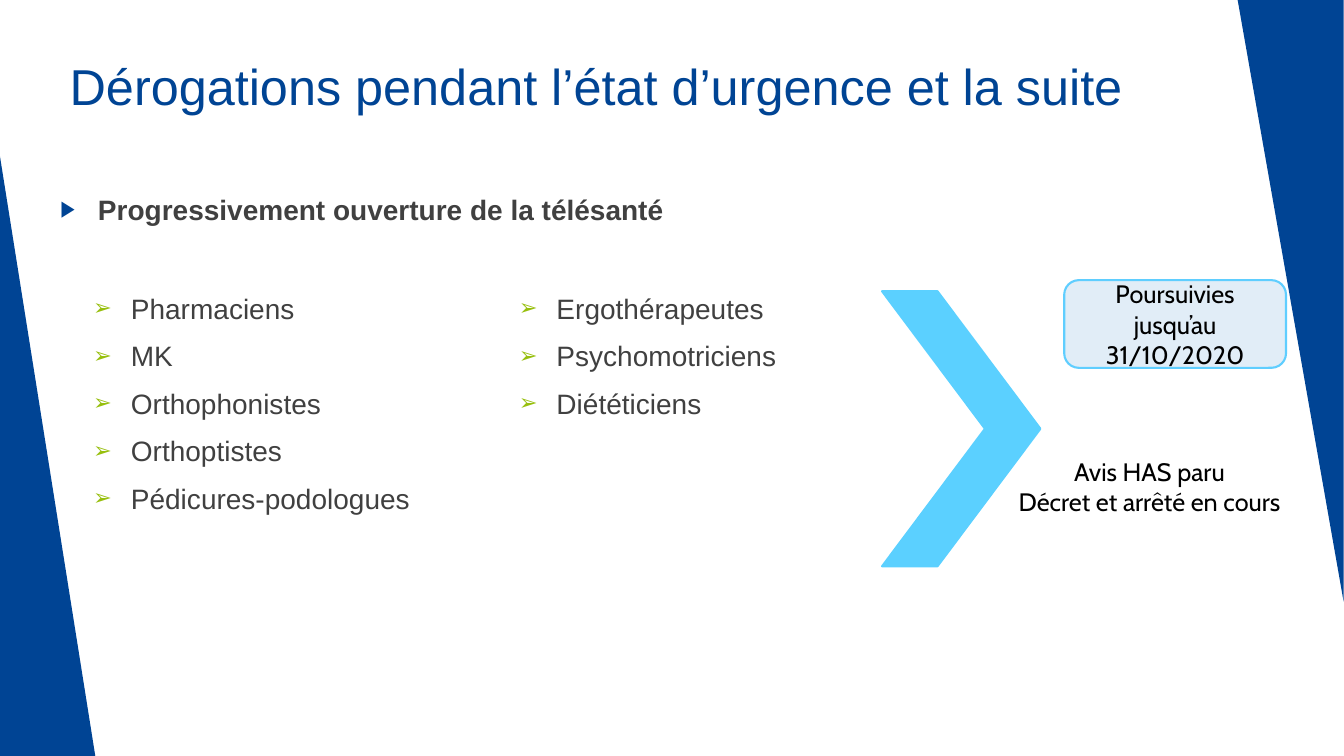
from dataclasses import dataclass
from typing import Any

from lxml import etree
from pptx import Presentation
from pptx.dml.color import RGBColor
from pptx.enum import shapes, text
from pptx.oxml import ns
from pptx.util import Cm, Pt

NAVY = RGBColor(0x00, 0x44, 0x94)
SKY = RGBColor(0x5B, 0xD0, 0xFF)
SKY_EDGE = RGBColor(0x5F, 0xCE, 0xFF)
PALE = RGBColor(0xE1, 0xED, 0xF7)
GREEN = RGBColor(0x97, 0xBF, 0x0D)
GREY = RGBColor(0x40, 0x40, 0x40)
BLACK = RGBColor(0x00, 0x00, 0x00)

INDENT = Cm(0.95)
PROFESSIONS = [
    "Pharmaciens", "MK", "Orthophonistes", "Orthoptistes",
    "Pédicures-podologues", "Ergothérapeutes", "Psychomotriciens",
    "Diététiciens",
]
TITLE_FONT = {"name": "Arial", "size": Pt(36), "color": NAVY}
HEADING_FONT = {"name": "Arial", "size": Pt(20), "bold": True, "color": GREY}
LIST_FONT = {"name": "Arial", "size": Pt(20), "color": GREY}
NOTE_FONT = {"name": "Cabin", "size": Pt(18), "color": BLACK}


@dataclass(frozen=True)
class Box:
    left: float
    top: float
    width: float
    height: float

    def lengths(self) -> tuple[Cm, Cm, Cm, Cm]:
        return Cm(self.left), Cm(self.top), Cm(self.width), Cm(self.height)


@dataclass(frozen=True)
class Figure:
    kind: shapes.MSO_SHAPE
    box: Box
    fill: RGBColor
    line: RGBColor | None = None
    rotation: int = 0
    adjustment: float | None = None


@dataclass(frozen=True)
class Bullet:
    char: str
    color: RGBColor
    margin: Cm


LEFT_WEDGE = Figure(shapes.MSO_SHAPE.RIGHT_TRIANGLE,
                    Box(0, 3.94, 2.41, 15.16), NAVY)
RIGHT_WEDGE = Figure(shapes.MSO_SHAPE.RIGHT_TRIANGLE,
                     Box(31.19, 0, 2.67, 15.16), NAVY, rotation=180)
CHEVRON = Figure(shapes.MSO_SHAPE.CHEVRON,
                 Box(22.23, 7.34, 3.99, 6.93), SKY, SKY, adjustment=0.65)
DEADLINE = Figure(shapes.MSO_SHAPE.ROUNDED_RECTANGLE,
                  Box(26.82, 7.06, 5.59, 2.21), PALE, SKY_EDGE)


def add_figure(s: Any, figure: Figure) -> Any:
    sp = s.shapes.add_shape(figure.kind, *figure.box.lengths())
    sp.shadow.inherit = False
    sp.rotation = figure.rotation
    sp.fill.solid()
    sp.fill.fore_color.rgb = figure.fill
    if figure.line is None:
        sp.line.fill.background()
    else:
        sp.line.color.rgb = figure.line
        sp.line.width = Pt(1.5)
    if figure.adjustment is not None:
        sp.adjustments[0] = figure.adjustment
    return sp


def add_text_box(s: Any, box: Box) -> Any:
    tf = s.shapes.add_textbox(*box.lengths()).text_frame
    tf.word_wrap = True
    return tf


def add_bullet(p: Any, bullet: Bullet) -> None:
    pPr = p._p.get_or_add_pPr()
    pPr.set("marL", str(bullet.margin))
    pPr.set("indent", str(-INDENT))
    color = etree.SubElement(pPr, ns.qn("a:buClr"))
    etree.SubElement(color, ns.qn("a:srgbClr"), val=str(bullet.color))
    etree.SubElement(pPr, ns.qn("a:buSzPct"), val="80000")
    etree.SubElement(pPr, ns.qn("a:buFont"), typeface="Arial")
    etree.SubElement(pPr, ns.qn("a:buChar"), char=bullet.char)


def write(tf: Any, lines: list[str], font: dict[str, Any],
          align: text.PP_ALIGN = text.PP_ALIGN.LEFT,
          bullet: Bullet | None = None, gap: int = 0) -> None:
    for i, line in enumerate(lines):
        p = tf.add_paragraph() if i else tf.paragraphs[0]
        p.alignment = align
        if bullet:
            add_bullet(p, bullet)
        p.space_before = Pt(gap if i else 0)
        r = p.add_run()
        r.text = line
        for name, value in font.items():
            if name == "color":
                r.font.color.rgb = value
            else:
                setattr(r.font, name, value)


def add_title(s: Any) -> None:
    title = s.shapes.title
    title.left, title.top, title.width, title.height = Box(
        1.5, 1.27, 27.13, 3.66).lengths()
    tf = title.text_frame
    tf.vertical_anchor = text.MSO_ANCHOR.TOP
    write(tf, ["Dérogations pendant l’état d’urgence et la suite"], TITLE_FONT)


def add_professions(s: Any) -> None:
    tf = add_text_box(s, Box(-0.43, 7.21, 21.95, 5.94))
    tf.auto_size = text.MSO_AUTO_SIZE.SHAPE_TO_FIT_TEXT
    tf._txBody.bodyPr.set("numCol", "2")
    write(tf, PROFESSIONS, LIST_FONT,
          bullet=Bullet("➢", GREEN, Cm(3.48)), gap=10)


def main() -> None:
    prs = Presentation()
    prs.slide_width, prs.slide_height = Cm(33.87), Cm(19.05)
    s = prs.slides.add_slide(prs.slide_layouts[5])

    for wedge in (LEFT_WEDGE, RIGHT_WEDGE):
        add_figure(s, wedge)
    add_title(s)

    heading = add_text_box(s, Box(1.27, 3.68, 27.13, 11.15))
    heading.margin_top = Cm(1.17)
    write(heading, ["Progressivement ouverture de la télésanté"], HEADING_FONT,
          bullet=Bullet("▶", NAVY, INDENT))
    add_professions(s)

    add_figure(s, CHEVRON)
    deadline = add_figure(s, DEADLINE).text_frame
    deadline.word_wrap = True
    deadline.vertical_anchor = text.MSO_ANCHOR.MIDDLE
    write(deadline, ["Poursuivies jusqu’au 31/10/2020"], NOTE_FONT,
          text.PP_ALIGN.CENTER)
    notice = add_text_box(s, Box(23.52, 11.38, 10.9, 1.8))
    write(notice, ["Avis HAS paru", "Décret et arrêté en cours"], NOTE_FONT,
          text.PP_ALIGN.CENTER)

    prs.save("out.pptx")


if __name__ == "__main__":
    main()
